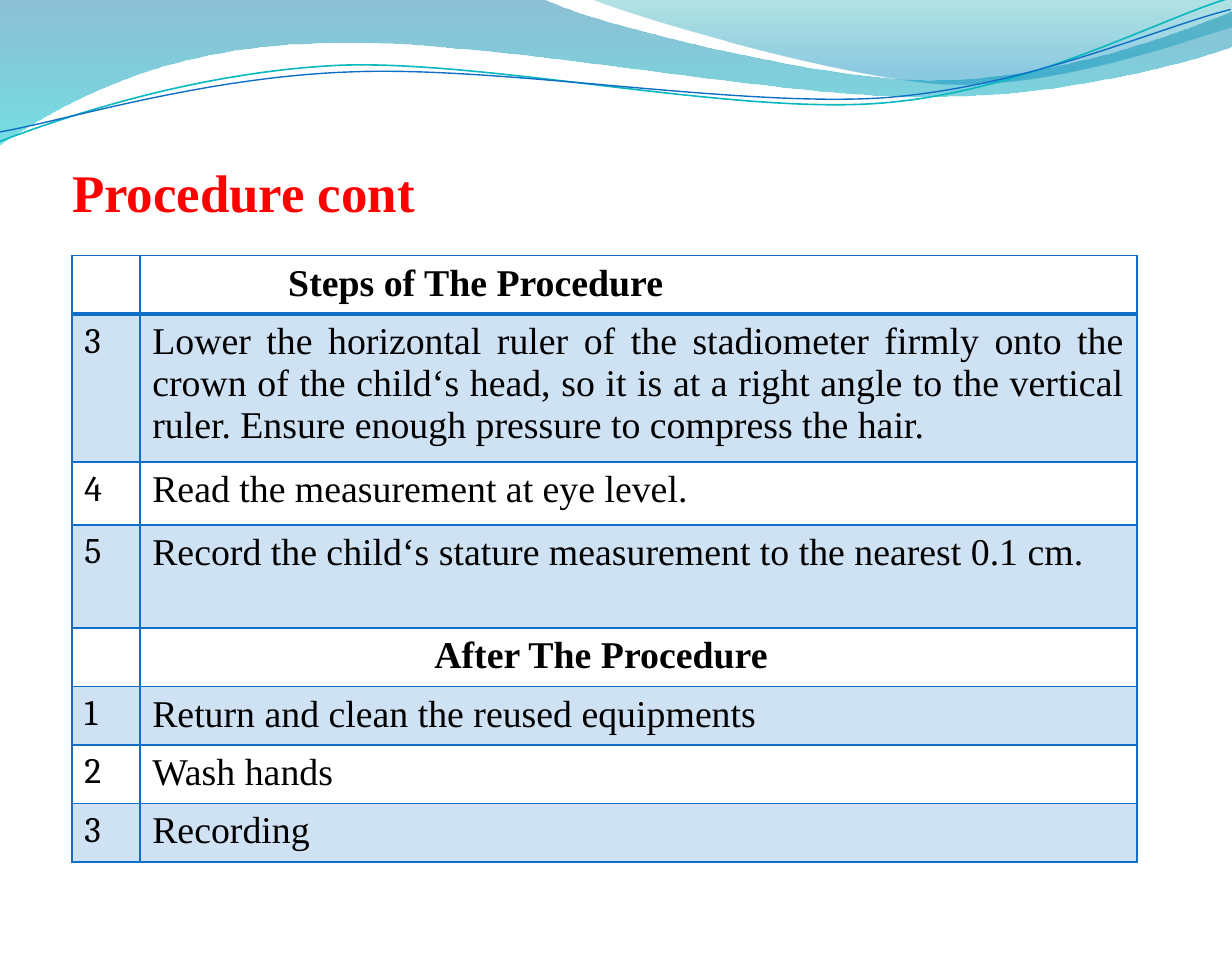
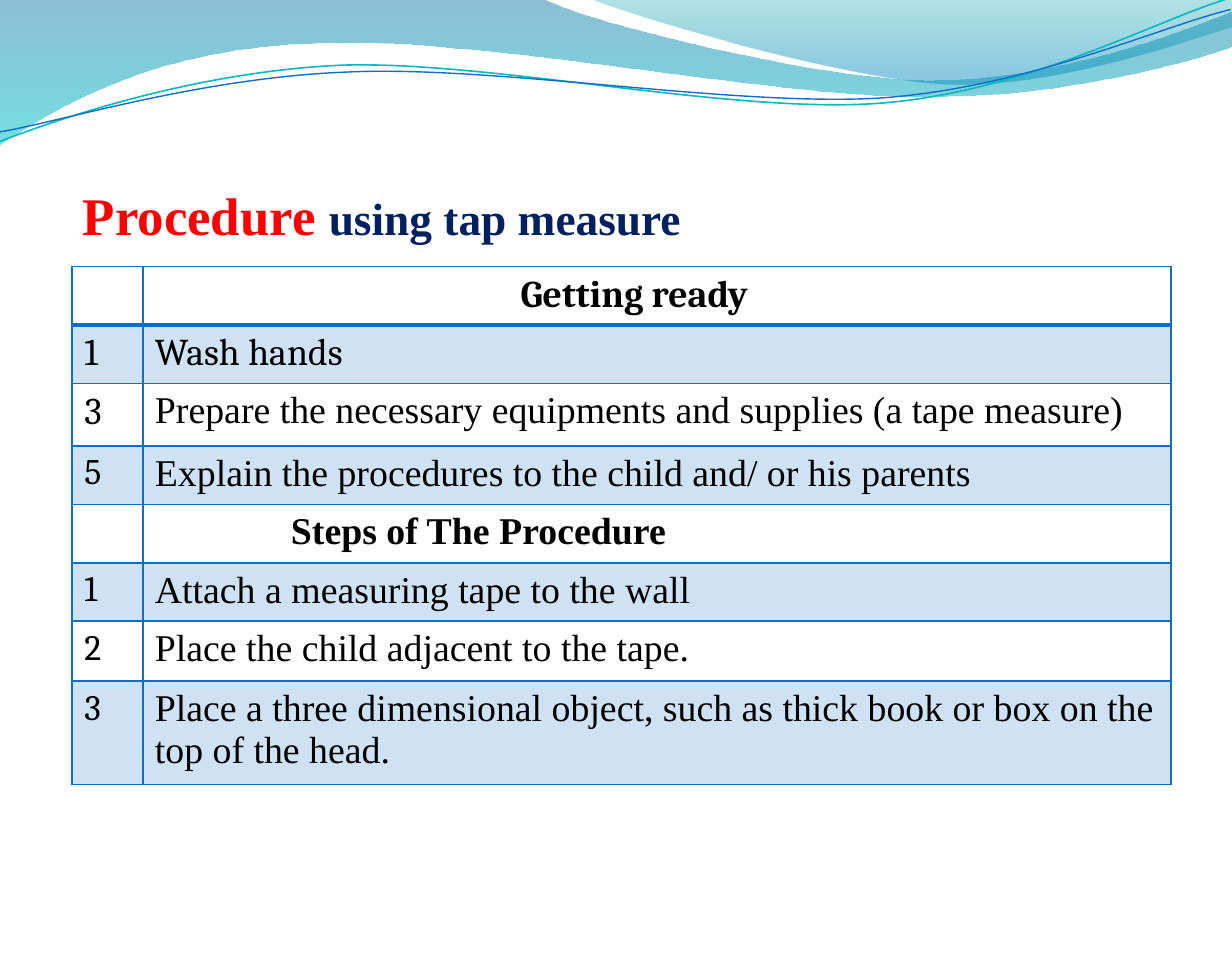
from lxml import etree
from pptx import Presentation
from pptx import util as u
from pptx.dml.color import RGBColor
from pptx.enum import text
from pptx.oxml.ns import qn

COLOURS = {
    "blue": "0F6FC6", "band": "CFE2F4", "white": "FFFFFF", "black": "000000",
    "red": "FF0000", "navy": "002060", "teal": "0AB8BF",
    "wave_top": "0074A1", "wave_bottom": "00C6CF",
    "crest_top": "00A1A9", "crest_bottom": "008BBF",
}
SERIF, HEADING = "Times New Roman", "Cambria"
ALIGN = text.PP_ALIGN

WAVES = [
    {"start": (0, 0),
     "segments": [[(3.99, -0.01)],
                  [(4.31, 0.16), (6.01, 0.59), (6.87, 0.59)],
                  [(7.73, 0.59), (8.68, 0.24), (9.06, 0.08)],
                  [(9.06, 0.34)],
                  [(8.9, 0.41), (7.88, 0.72), (6.75, 0.71)],
                  [(5.63, 0.71), (3.46, 0.26), (2.33, 0.32)],
                  [(1.17, 0.34), (0.42, 0.78), (-0.01, 1.07)],
                  [(0, 0)]],
     "stops": [(0, "wave_top", 45), (1, "wave_bottom", 55)]},
    {"start": (4.34, -0.01),
     "segments": [[(4.61, 0.11), (6.18, 0.58), (6.96, 0.62)],
                  [(7.75, 0.65), (8.71, 0.3), (9.06, 0.2)],
                  [(9.06, 0)],
                  [(4.34, -0.01)]],
     "stops": [(0, "crest_top", 30), (0.8, "crest_bottom", 45)]},
    {"start": (0, 1.04),
     "segments": [[(0.44, 0.87), (1.43, 0.53), (2.5, 0.48)],
                  [(3.58, 0.44), (5.37, 0.84), (6.46, 0.76)],
                  [(7.54, 0.68), (8.5, 0.15), (9.03, -0.01)]],
     "line": ("teal", 0.85)},
    {"start": (0, 0.97),
     "segments": [[(0.43, 0.9), (1.48, 0.57), (2.56, 0.53)],
                  [(3.65, 0.48), (5.41, 0.79), (6.49, 0.72)],
                  [(7.57, 0.64), (8.52, 0.2), (9.05, 0.07)]],
     "line": ("blue", 0.75)},
]

NUMBER = {"font": HEADING, "size": 19}
TITLE = {"font": SERIF, "size": 28, "bold": True, "colour": "red"}
STEPS_HEADING = {"bold": True, "indent": 1}

SLIDES = [
    {"title": [("Procedure cont", {})],
     "title_box": (0.53, 0.46, 8.15, 1.18),
     "table_box": (0.53, 1.88, 7.83),
     "number_width": 0.5,
     "rows": [
         ("", "Steps of The Procedure", 0.43, STEPS_HEADING),
         ("3", "Lower the horizontal ruler of the stadiometer firmly onto the crown of "
               "the child‘s head, so it is at a right angle to the vertical ruler. "
               "Ensure enough pressure to compress the hair.", 1.09,
          {"alignment": ALIGN.JUSTIFY}),
         ("4", "Read the measurement at eye level.", 0.46, {}),
         ("5", "Record the child‘s stature measurement to the nearest 0.1 cm.", 0.76, {}),
         ("", "After The Procedure", 0.43,
          {"bold": True, "alignment": ALIGN.CENTER, "right_indent": 0.55}),
         ("1", "Return and clean the reused equipments", 0.43, {}),
         ("2", "Wash hands", 0.43, {}),
         ("3", "Recording", 0.43, {}),
     ]},
    {"title": [("Procedure ", {}),
               ("using tap measure", {"size": 24, "colour": "navy"})],
     "title_box": (0.61, 0.63, 8.15, 1.18),
     "table_box": (0.53, 1.96, 8.08),
     "number_width": 0.52,
     "rows": [
         ("", "Getting ready", 0.43,
          {"font": HEADING, "bold": True, "alignment": ALIGN.CENTER, "right_indent": 0.33}),
         ("1", "Wash hands", 0.43, {"font": HEADING, "number_size": 20}),
         ("3", "Prepare the necessary equipments and supplies (a tape measure)", 0.46,
          {"number_size": 20}),
         ("5", "Explain the procedures to the child and/ or his parents", 0.43, {}),
         ("", "Steps of The Procedure", 0.43, STEPS_HEADING),
         ("1", "Attach a measuring tape to the wall", 0.43, {}),
         ("2", "Place the child adjacent to the tape.", 0.44, {}),
         ("3", "Place a three dimensional object, such as thick book or box on the top "
               "of the head.", 0.76, {}),
     ]},
]


def rgb(name):
    return RGBColor.from_string(COLOURS[name])


def set_attributes(target, values):
    for name, value in values.items():
        setattr(target, name, value)


def add_run(paragraph, content, style):
    run = paragraph.add_run()
    run.text = content
    set_attributes(run.font, {
        "name": style.get("font", SERIF),
        "size": u.Pt(style.get("size", 20)),
        "bold": style.get("bold", False),
    })
    run.font.color.rgb = rgb(style.get("colour", "black"))


def to_emu(point):
    return tuple(u.Inches(length) for length in point)


def bend_segments(shape, segments):
    corners = list(shape.element.iter(qn("a:lnTo")))
    for segment in segments:
        group, corners = corners[:len(segment)], corners[len(segment):]
        if len(group) == 3:
            curve = etree.Element(qn("a:cubicBezTo"))
            group[0].addprevious(curve)
            for corner in group:
                curve.append(corner[0])
                corner.getparent().remove(corner)


def fill_gradient(shape, stops):
    shape.fill.gradient()
    shape.fill.gradient_angle = 270
    for gradient_stop, (position, colour, _) in zip(shape.fill.gradient_stops, stops):
        gradient_stop.position = position
        gradient_stop.color.rgb = rgb(colour)
    for element, (_, _, opacity) in zip(shape.element.iter(qn("a:srgbClr")), stops):
        etree.SubElement(element, qn("a:alpha"), val=str(opacity * 1000))


def add_wave(slide, wave):
    filled = "stops" in wave
    builder = slide.shapes.build_freeform(*to_emu(wave["start"]))
    builder.add_line_segments(
        [to_emu(point) for segment in wave["segments"] for point in segment], close=filled)
    shape = builder.convert_to_shape()
    bend_segments(shape, wave["segments"])
    shape.shadow.inherit = False
    if filled:
        shape.line.fill.background()
        fill_gradient(shape, wave["stops"])
    else:
        colour, width = wave["line"]
        shape.fill.background()
        shape.line.color.rgb = rgb(colour)
        shape.line.width = u.Pt(width)
    return shape


def move_waves_to_layout(slide):
    tree = slide.slide_layout.shapes.element
    for index, wave in enumerate(WAVES):
        element = add_wave(slide, wave).element
        element.nvSpPr.cNvPr.set("id", str(100 + index))
        tree.insert(2 + index, element)


def place_title(slide, box, runs):
    title = slide.shapes.title
    set_attributes(title, dict(zip(("left", "top", "width", "height"), map(u.Inches, box))))
    frame = title.text_frame
    set_attributes(frame, {
        "margin_left": 0, "margin_right": 0, "margin_bottom": 0,
        "margin_top": u.Inches(0.05), "word_wrap": True,
        "auto_size": text.MSO_AUTO_SIZE.NONE,
        "vertical_anchor": text.MSO_ANCHOR.BOTTOM,
    })
    paragraph = frame.paragraphs[0]
    set_attributes(paragraph, {
        "alignment": ALIGN.LEFT, "line_spacing": 1.5, "space_before": u.Pt(2.9),
    })
    for content, changes in runs:
        add_run(paragraph, content, {**TITLE, **changes})


def set_borders(cell, row_index):
    properties = cell._tc.get_or_add_tcPr()
    widths = {"lnL": 1, "lnR": 1, "lnT": 1, "lnB": 1 if row_index else 2}
    for index, (side, width) in enumerate(widths.items()):
        line = etree.Element(qn(f"a:{side}"), w=str(u.Pt(width)))
        fill = etree.SubElement(line, qn("a:solidFill"))
        etree.SubElement(fill, qn("a:srgbClr"), val=COLOURS["blue"])
        properties.insert(index, line)


def fill_cell(cell, row_index, content, style):
    cell.fill.solid()
    cell.fill.fore_color.rgb = rgb("band" if row_index % 2 else "white")
    set_borders(cell, row_index)
    set_attributes(cell, {
        "margin_left": u.Inches(0.09 + style.get("indent", 0)),
        "margin_right": u.Inches(0.09 + style.get("right_indent", 0)),
        "margin_top": u.Inches(0.05), "margin_bottom": u.Inches(0.05),
    })
    if content:
        paragraph = cell.text_frame.paragraphs[0]
        paragraph.alignment = style.get("alignment", ALIGN.LEFT)
        add_run(paragraph, content, style)


def place_table(slide, box, number_width, rows):
    left, top, width = box
    height = sum(row[2] for row in rows)
    table = slide.shapes.add_table(
        len(rows), 2, *map(u.Inches, (left, top, width, height))).table
    set_attributes(table, {"first_row": False, "horz_banding": False})
    table.columns[0].width = u.Inches(number_width)
    table.columns[1].width = u.Inches(width - number_width)
    for index, (number, content, row_height, style) in enumerate(rows):
        table.rows[index].height = u.Inches(row_height)
        number_style = {**NUMBER, "size": style.get("number_size", NUMBER["size"])}
        fill_cell(table.cell(index, 0), index, number, number_style)
        fill_cell(table.cell(index, 1), index, content, style)


def main():
    presentation = Presentation()
    presentation.slide_width = u.Inches(9.06)
    presentation.slide_height = u.Inches(7.09)
    layout = presentation.slide_layouts[5]
    for index, details in enumerate(SLIDES):
        slide = presentation.slides.add_slide(layout)
        if index == 0:
            move_waves_to_layout(slide)
        place_title(slide, details["title_box"], details["title"])
        place_table(slide, details["table_box"], details["number_width"], details["rows"])
    presentation.save("out.pptx")


if __name__ == "__main__":
    main()
